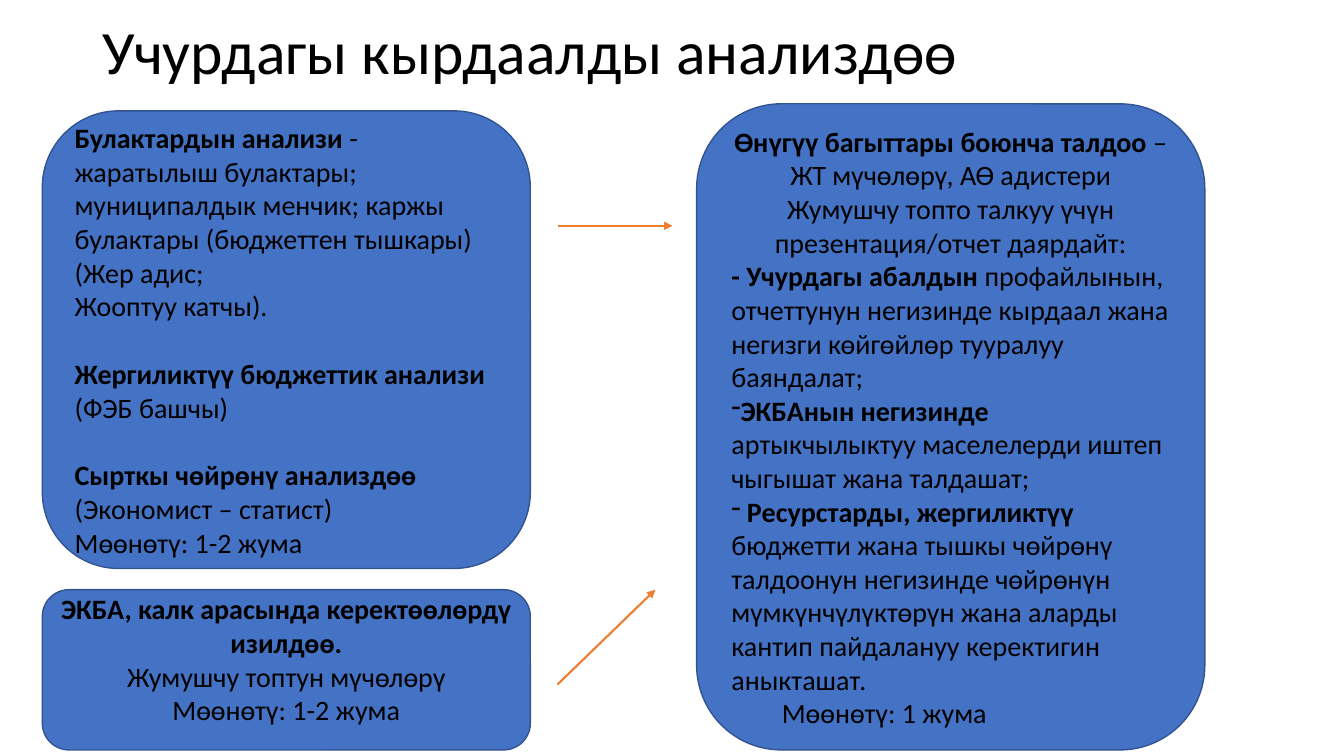
"""Builds the slide on analysing the current situation."""
from lxml import etree
from pptx import Presentation
from pptx.dml.color import RGBColor
from pptx.enum import shapes, text
from pptx.oxml.ns import qn
from pptx.util import Inches, Pt

BLACK = RGBColor(0x00, 0x00, 0x00)
BLUE = RGBColor(0x44, 0x72, 0xC4)
NAVY = RGBColor(0x32, 0x54, 0x91)
ORANGE = RGBColor(0xED, 0x7D, 0x31)
LEFT, CENTER = text.PP_ALIGN.LEFT, text.PP_ALIGN.CENTER

TITLE = "Учурдагы кырдаалды анализдөө"
TITLE_BOX = (0.92, 0.15, 11.5, 0.78)

SOURCES = [
    {"bold": "Булактардын анализи ",
     "plain": "- жаратылыш булактары; муниципалдык менчик; каржы булактары (бюджеттен тышкары)"},
    {"plain": "(Жер адис;"},
    {"plain": "Жооптуу катчы)."},
    {"bold": "Жергиликтүү бюджеттик анализи ", "plain": "(ФЭБ башчы)", "gap": 24.4},
    {"bold": "Сырткы чөйрөнү анализдөө", "gap": 24.4},
    {"plain": "(Экономист – статист)"},
    {"plain": "Мөөнөтү: 1-2 жума"},
]
DIRECTIONS = [
    {"bold": "Өнүгүү багыттары боюнча талдоо",
     "plain": " – ЖТ мүчөлөрү, АӨ адистери Жумушчу топто талкуу үчүн презентация/отчет даярдайт:",
     "align": CENTER},
    {"bold": "- Учурдагы абалдын ",
     "plain": "профайлынын, отчеттунун негизинде кырдаал жана негизги көйгөйлөр тууралуу баяндалат;"},
    {"bold": "ЭКБАнын негизинде ",
     "plain": "артыкчылыктуу маселелерди иштеп чыгышат жана талдашат;", "bullet": "-"},
    {"lead": " ", "bold": "Ресурстарды, жергиликтүү ",
     "plain": "бюджетти жана тышкы чөйрөнү талдоонун негизинде чөйрөнүн мүмкүнчүлүктөрүн "
              "жана аларды кантип пайдалануу керектигин аныкташат.", "bullet": "-"},
    {"plain": "Мөөнөтү: 1 жума", "indent": 0.5},
]
NEEDS = [
    {"bold": "ЭКБА, калк арасында керектөөлөрдү изилдөө.", "align": CENTER},
    {"plain": "Жумушчу топтун мүчөлөрү", "align": CENTER},
    {"plain": "Мөөнөтү: 1-2 жума", "align": CENTER},
]
PANELS = [
    ((0.42, 1.1, 4.84, 4.54), SOURCES, 0.05),
    ((6.91, 1.03, 5.04, 6.41), DIRECTIONS, 0.05),
    ((0.42, 5.85, 4.84, 1.59), NEEDS, 0.26),
]
ARROWS = [(5.53, 2.24, 6.67, 2.24), (5.53, 6.79, 6.5, 5.85)]


def apply(obj, values):
    for name, value in values.items():
        setattr(obj, name, value)


def add_run(p, words, size, bold=False):
    r = p.add_run()
    r.text = words
    apply(r.font, {"name": "Calibri", "size": Pt(size), "bold": bold})
    r.font.color.rgb = BLACK


def add_paragraph(p, item):
    apply(p, {"alignment": item.get("align", LEFT), "space_before": Pt(item.get("gap", 0))})
    pPr = p._p.get_or_add_pPr()
    if "indent" in item:
        pPr.set("marL", str(Inches(item["indent"])))
    if "bullet" in item:
        etree.SubElement(pPr, qn("a:buChar")).set("char", item["bullet"])
    for part in ("lead", "bold", "plain"):
        if part in item:
            add_run(p, item[part], 20, part == "bold")


def add_panel(s, box, items, bottom):
    sp = s.shapes.add_shape(shapes.MSO_SHAPE.ROUNDED_RECTANGLE, *map(Inches, box))
    sp.shadow.inherit = False
    sp.fill.solid()
    sp.fill.fore_color.rgb = BLUE
    sp.line.color.rgb = NAVY
    sp.line.width = Pt(1)
    tf = sp.text_frame
    apply(tf, {"word_wrap": True, "vertical_anchor": text.MSO_ANCHOR.MIDDLE,
               "margin_bottom": Inches(bottom)})
    for i, item in enumerate(items):
        add_paragraph(tf.add_paragraph() if i else tf.paragraphs[0], item)


def add_arrow(s, ends):
    c = s.shapes.add_connector(shapes.MSO_CONNECTOR.STRAIGHT, *map(Inches, ends))
    c.line.color.rgb = ORANGE
    c.line.width = Pt(1.5)
    etree.SubElement(c.line._get_or_add_ln(), qn("a:tailEnd")).set("type", "triangle")
    etree.SubElement(c._element.spPr, qn("a:effectLst"))


def main():
    prs = Presentation()
    apply(prs, {"slide_width": Inches(13.33), "slide_height": Inches(7.5)})
    s = prs.slides.add_slide(prs.slide_layouts[6])
    tf = s.shapes.add_textbox(*map(Inches, TITLE_BOX)).text_frame
    apply(tf, {"word_wrap": True, "vertical_anchor": text.MSO_ANCHOR.MIDDLE})
    p = tf.paragraphs[0]
    p.line_spacing = 0.9
    add_run(p, TITLE, 44)
    for panel in PANELS:
        add_panel(s, *panel)
    for ends in ARROWS:
        add_arrow(s, ends)
    prs.save("out.pptx")


if __name__ == "__main__":
    main()
